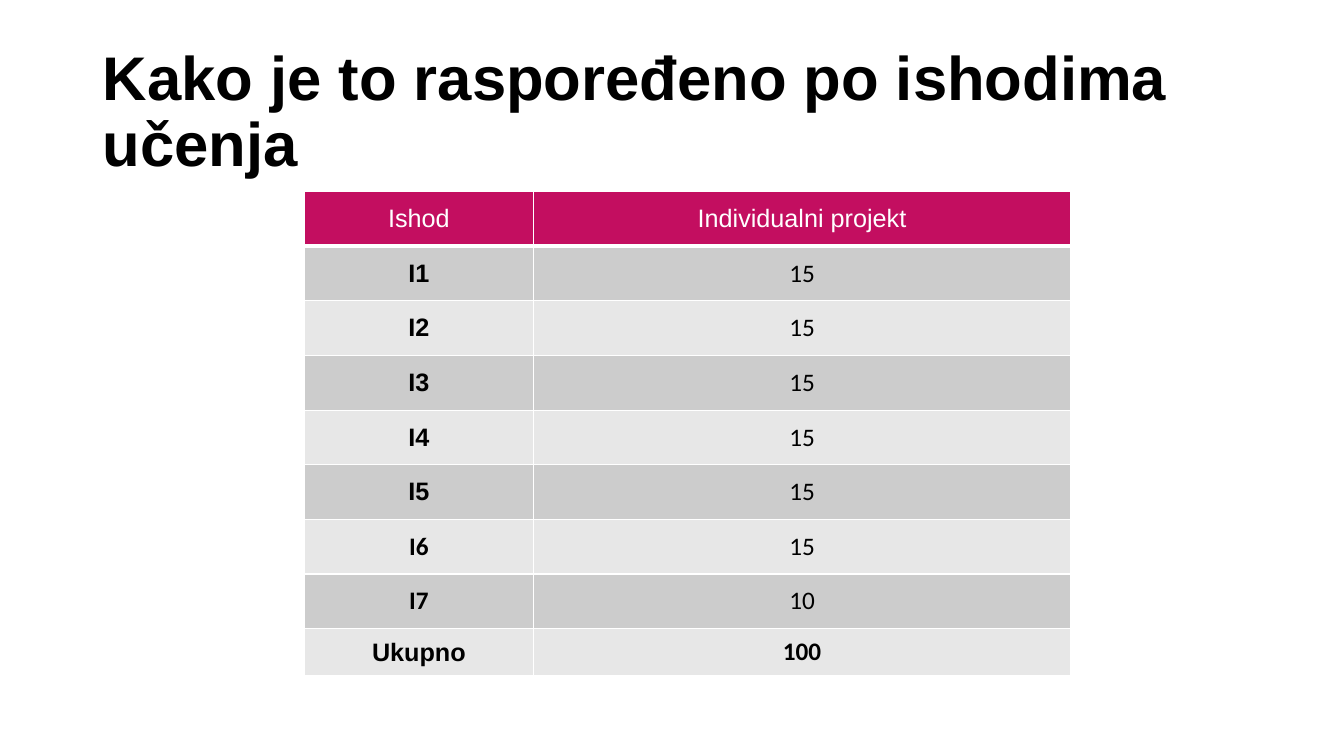
from lxml import etree
from pptx import Presentation
from pptx.dml.color import RGBColor
from pptx.enum.text import MSO_ANCHOR, PP_ALIGN
from pptx.oxml.ns import qn
from pptx.util import Inches, Pt

MIDDLE = MSO_ANCHOR.MIDDLE
CENTER = PP_ALIGN.CENTER

COLORS = {
    "text": "000000",
    "white": "FFFFFF",
    "header": "C30E60",
    "dark_band": "CCCCCC",
    "light_band": "E7E7E7",
}

TITLE = "Kako je to raspoređeno po ishodima učenja"
HEADER = ("Ishod", "Individualni projekt")
OUTCOMES = [
    ("I1", "15", "Arial"),
    ("I2", "15", "Arial"),
    ("I3", "15", "Arial"),
    ("I4", "15", "Arial"),
    ("I5", "15", "Arial"),
    ("I6", "15", "Calibri"),
    ("I7", "10", "Calibri"),
    ("Ukupno", "100", "Arial"),
]


def color(name):
    return RGBColor.from_string(COLORS[name])


def set_font(paragraph, name, size, color_name, bold):
    font = paragraph.font
    font.name = name
    font.size = Pt(size)
    font.bold = bold
    font.color.rgb = color(color_name)


def set_borders(cell, bottom_width):
    properties = cell._tc.get_or_add_tcPr()
    widths = {"lnL": 1, "lnR": 1, "lnT": 1, "lnB": bottom_width}
    for index, (side, width) in enumerate(widths.items()):
        line = etree.Element(qn(f"a:{side}"), w=str(Pt(width)))
        fill = etree.SubElement(line, qn("a:solidFill"))
        etree.SubElement(fill, qn("a:srgbClr"), val=COLORS["white"])
        properties.insert(index, line)


def fill_cell(cell, text, fill, font_name, font_color, bold, bottom_width=1):
    cell.fill.solid()
    cell.fill.fore_color.rgb = color(fill)
    cell.vertical_anchor = MIDDLE
    set_borders(cell, bottom_width)
    cell.text = text
    paragraph = cell.text_frame.paragraphs[0]
    paragraph.alignment = CENTER
    set_font(paragraph, font_name, 18, font_color, bold)


def add_title(slide, left, top, width, height):
    box = slide.shapes.add_textbox(
        Inches(left), Inches(top), Inches(width), Inches(height)
    )
    frame = box.text_frame
    frame.word_wrap = True
    frame.vertical_anchor = MIDDLE
    paragraph = frame.paragraphs[0]
    paragraph.text = TITLE
    paragraph.line_spacing = 0.9
    set_font(paragraph, "Arial", 44, "text", True)


def add_outcome_table(slide, left, top, width, height):
    row_count = len(OUTCOMES) + 1
    table = slide.shapes.add_table(
        row_count, 2, Inches(left), Inches(top), Inches(width), Inches(height)
    ).table
    label_width = 2.27
    total_height = 0.47
    table.columns[0].width = Inches(label_width)
    table.columns[1].width = Inches(width - label_width)
    for row in table.rows:
        row.height = Inches((height - total_height) / (row_count - 1))
    table.rows[row_count - 1].height = Inches(total_height)

    for column, text in enumerate(HEADER):
        fill_cell(table.cell(0, column), text, "header", "Arial", "white", False, 3)
    for row, (label, points, label_font) in enumerate(OUTCOMES, start=1):
        band = "dark_band" if row % 2 else "light_band"
        is_total = row == len(OUTCOMES)
        fill_cell(table.cell(row, 0), label, band, label_font, "text", True)
        fill_cell(table.cell(row, 1), points, band, "Calibri", "text", is_total)


def main():
    presentation = Presentation()
    presentation.slide_width = Inches(13.33)
    presentation.slide_height = Inches(7.5)
    slide = presentation.slides.add_slide(presentation.slide_layouts[6])
    add_title(slide, 0.92, 0.4, 11.5, 1.45)
    add_outcome_table(slide, 3.02, 1.9, 7.6, 4.81)
    presentation.save("out.pptx")


if __name__ == "__main__":
    main()
